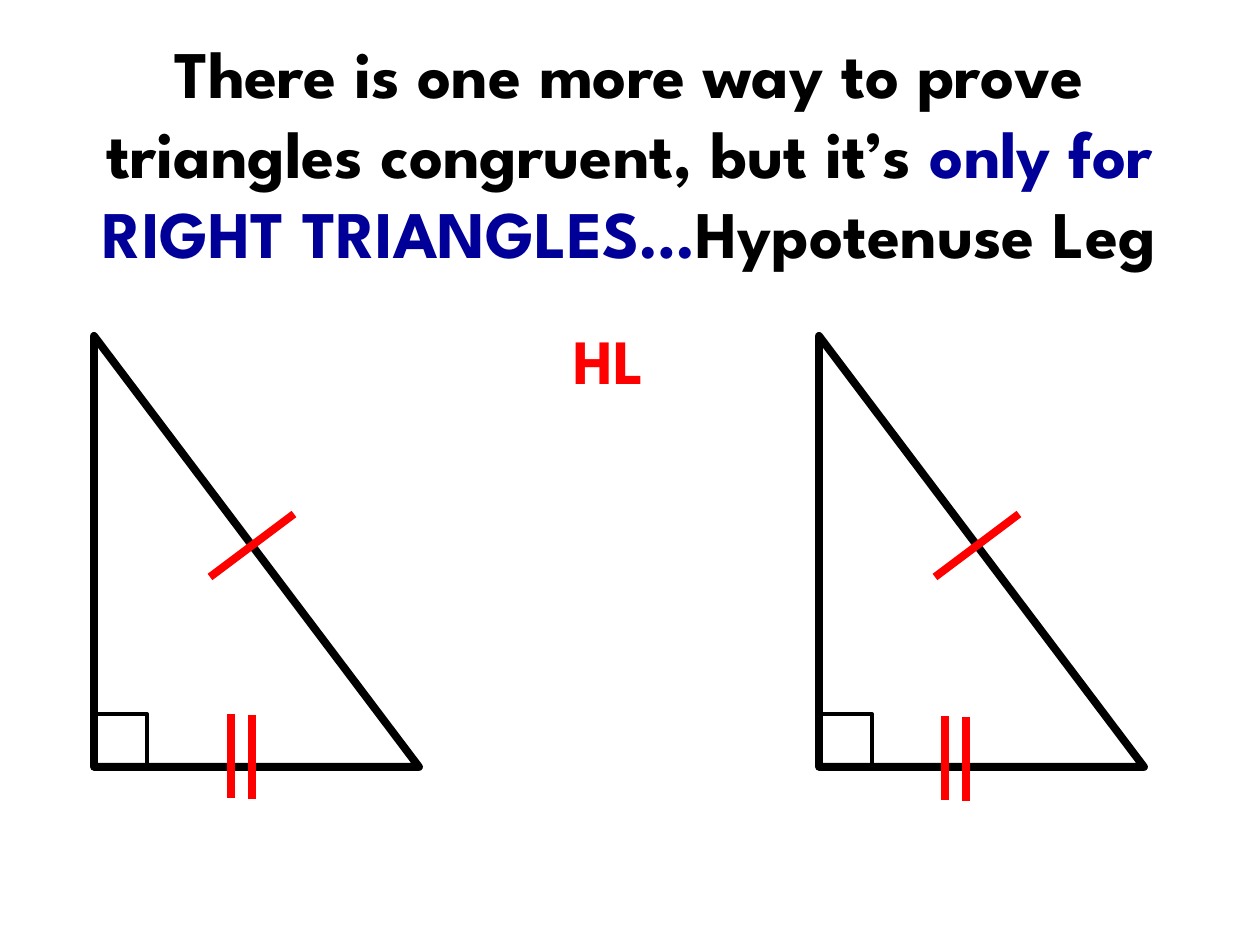
from lxml.etree import SubElement
from pptx import Presentation
from pptx.dml.color import RGBColor
from pptx.enum.shapes import MSO_CONNECTOR as Connector, MSO_SHAPE as Shape
from pptx.enum.text import MSO_ANCHOR as Anchor, PP_ALIGN as Align
from pptx.oxml.ns import qn
from pptx.util import Emu, Pt

PX = 914400 // 126
BLACK, BLUE, RED = "000000", "000099", "FF0000"


def px(value):
    return Emu(value * PX)


def color(hex_string):
    return RGBColor.from_string(hex_string)


class SlideBuilder:
    """Holds the text style and the current slide."""

    font_name = "League Spartan"

    def __init__(self, slide):
        self.slide = slide

    def text(self, left, top, width, height, runs, size, anchor, wrap=True):
        """Add one centred paragraph; runs are (text, colour) pairs."""
        box = self.slide.shapes.add_textbox(px(left), px(top), px(width), px(height))
        frame = box.text_frame
        frame.word_wrap = wrap
        frame.vertical_anchor = anchor
        paragraph = frame.paragraphs[0]
        paragraph.alignment = Align.CENTER
        paragraph.font.name = self.font_name
        paragraph.font.size = Pt(size)
        paragraph.font.bold = True
        for words, hex_string in runs:
            run = paragraph.add_run()
            run.text = words
            run.font.color.rgb = color(hex_string)

    def outline(self, preset, left, top, width, height, weight):
        shape = self.slide.shapes.add_shape(
            preset, px(left), px(top), px(width), px(height))
        shape.shadow.inherit = False
        shape.fill.background()
        shape.line.color.rgb = color(BLACK)
        shape.line.width = Pt(weight)

    def tick(self, x1, y1, x2, y2):
        line = self.slide.shapes.add_connector(
            Connector.STRAIGHT, px(x1), px(y1), px(x2), px(y2))
        line.line.color.rgb = color(RED)
        line.line.width = Pt(4.5)
        SubElement(line._element.spPr, qn("a:effectLst"))

    def right_triangle(self, left, leg_tick_left, leg_tick_top):
        """Draw a right triangle with its angle mark and congruence ticks."""
        top, width, height, corner = 336, 325, 431, 53
        self.outline(Shape.RIGHT_TRIANGLE, left, top, width, height, 4.5)
        self.outline(Shape.RECTANGLE, left, top + height - corner, corner, corner, 2.25)
        self.tick(left + 200, 514, left + 116, 577)
        for x, y in ((leg_tick_left, leg_tick_top),
                     (leg_tick_left + 21, leg_tick_top + 1)):
            self.tick(x, y, x, y + 84)


def main():
    presentation = Presentation()
    presentation.slide_width = px(1260)
    presentation.slide_height = px(945)
    slide = presentation.slides.add_slide(presentation.slide_layouts[6])
    builder = SlideBuilder(slide)

    builder.text(31, 21, 1197, 262, [
        ("There is one more way to prove triangles congruent, but it’s ", BLACK),
        ("only for RIGHT TRIANGLES…", BLUE),
        ("Hypotenuse Leg", BLACK),
    ], 38, Anchor.MIDDLE)
    builder.right_triangle(94, 231, 714)
    builder.right_triangle(819, 945, 716)
    builder.text(441, 315, 336, 262, [("HL", RED)], 36, Anchor.TOP, wrap=False)

    presentation.save("out.pptx")


if __name__ == "__main__":
    main()
